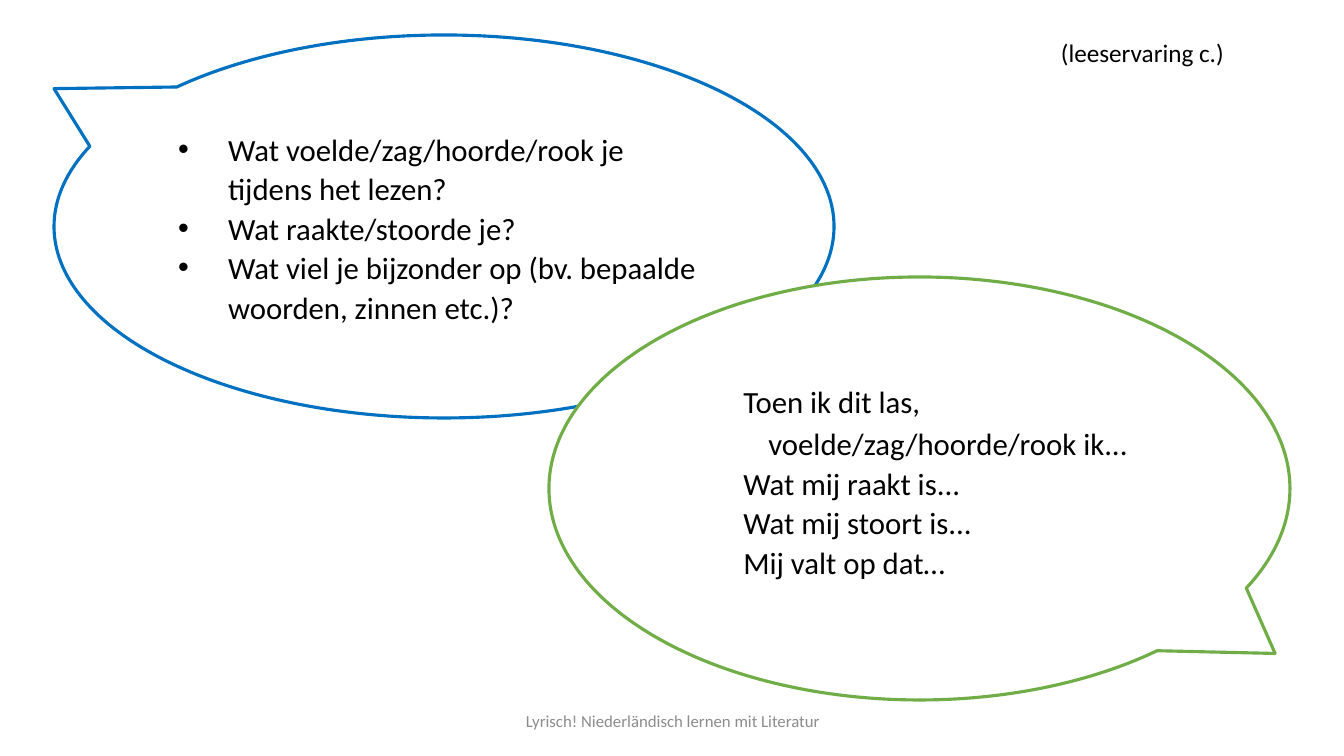
from lxml.etree import SubElement
from pptx import Presentation
from pptx.dml.color import RGBColor
from pptx.enum.shapes import MSO_SHAPE
from pptx.enum.text import MSO_ANCHOR, PP_ALIGN
from pptx.oxml.ns import qn
from pptx.util import Emu, Pt

WHITE = RGBColor(0xFF, 0xFF, 0xFF)
BLACK = RGBColor(0x00, 0x00, 0x00)
GREY = RGBColor(0x8C, 0x8C, 0x8C)
BLUE = RGBColor(0x00, 0x70, 0xC0)
GREEN = RGBColor(0x70, 0xAD, 0x47)
SLIDE_SIZE = (1344, 756)

CAPTIONS = [
    ("Lyrisch! Niederländisch lernen mit Literatur", (446, 701, 454, 40),
     12, GREY, PP_ALIGN.CENTER, MSO_ANCHOR.MIDDLE),
    ("(leeservaring c.)", (1051, 32, 215, 40),
     18, BLACK, PP_ALIGN.LEFT, MSO_ANCHOR.TOP),
]
BUBBLES = [
    {
        "box": (54, 35, 780, 383), "tip": (-0.5, -0.36), "color": BLUE,
        "margin": 50, "hang": 50, "bullet": "•", "bottom": 5,
        "lines": [
            ("Wat voelde/zag/hoorde/rook je tijdens het lezen?", 1.07),
            ("Wat raakte/stoorde je?", 1.07),
            ("Wat viel je bijzonder op (bv. bepaalde woorden, zinnen etc.)?", 1.07),
        ],
    },
    {
        "box": (549, 277, 741, 423), "tip": (0.48, 0.39), "color": GREEN,
        "margin": 101, "hang": 25, "bullet": None, "bottom": 25,
        "lines": [
            ("Toen ik dit las, voelde/zag/hoorde/rook ik...", 1.15),
            ("Wat mij raakt is...", 1.07),
            ("Wat mij stoort is...", 1.07),
            ("Mij valt op dat…", 1.07),
        ],
    },
]


def px(length):
    """Turn px into EMU."""
    return Emu(round(length * 914400 / 100.8))


def style(paragraph, size, color, align):
    """Align a paragraph and format its runs."""
    paragraph.alignment = align
    for run in paragraph.runs:
        run.font.name = "Calibri"
        run.font.size = Pt(size)
        run.font.color.rgb = color


def add_caption(slide, text, box, size, color, align, anchor):
    """Add one line of plain text."""
    caption = slide.shapes.add_textbox(*map(px, box)).text_frame
    caption.word_wrap = True
    caption.vertical_anchor = anchor
    caption.text = text
    style(caption.paragraphs[0], size, color, align)


def add_bubble(slide, bubble):
    """Add a speech bubble with its hanging lines."""
    callout = slide.shapes.add_shape(MSO_SHAPE.OVAL_CALLOUT, *map(px, bubble["box"]))
    callout.shadow.inherit = False
    for index, offset in enumerate(bubble["tip"]):
        callout.adjustments[index] = offset
    callout.fill.solid()
    callout.fill.fore_color.rgb = WHITE
    callout.line.color.rgb = bubble["color"]
    callout.line.width = Pt(2.25)

    speech = callout.text_frame
    speech.word_wrap = True
    speech.vertical_anchor = MSO_ANCHOR.MIDDLE
    speech.margin_bottom = px(bubble["bottom"])
    speech.text = "\n".join(text for text, _ in bubble["lines"])
    for paragraph, (_, spacing) in zip(speech.paragraphs, bubble["lines"]):
        style(paragraph, 22, BLACK, PP_ALIGN.LEFT)
        paragraph.line_spacing = spacing
        properties = paragraph._p.get_or_add_pPr()
        properties.set("marL", str(px(bubble["margin"])))
        properties.set("indent", str(-px(bubble["hang"])))
        if bubble["bullet"]:
            SubElement(properties, qn("a:buFont"), typeface="Arial")
            SubElement(properties, qn("a:buChar"), char=bubble["bullet"])
    speech.paragraphs[-1].space_after = Pt(8)


def main():
    """Build the slide and save it."""
    deck = Presentation()
    deck.slide_width, deck.slide_height = map(px, SLIDE_SIZE)
    slide = deck.slides.add_slide(deck.slide_layouts[6])
    for bubble in BUBBLES:
        add_bubble(slide, bubble)
    for caption in CAPTIONS:
        add_caption(slide, *caption)
    deck.save("out.pptx")


if __name__ == "__main__":
    main()
